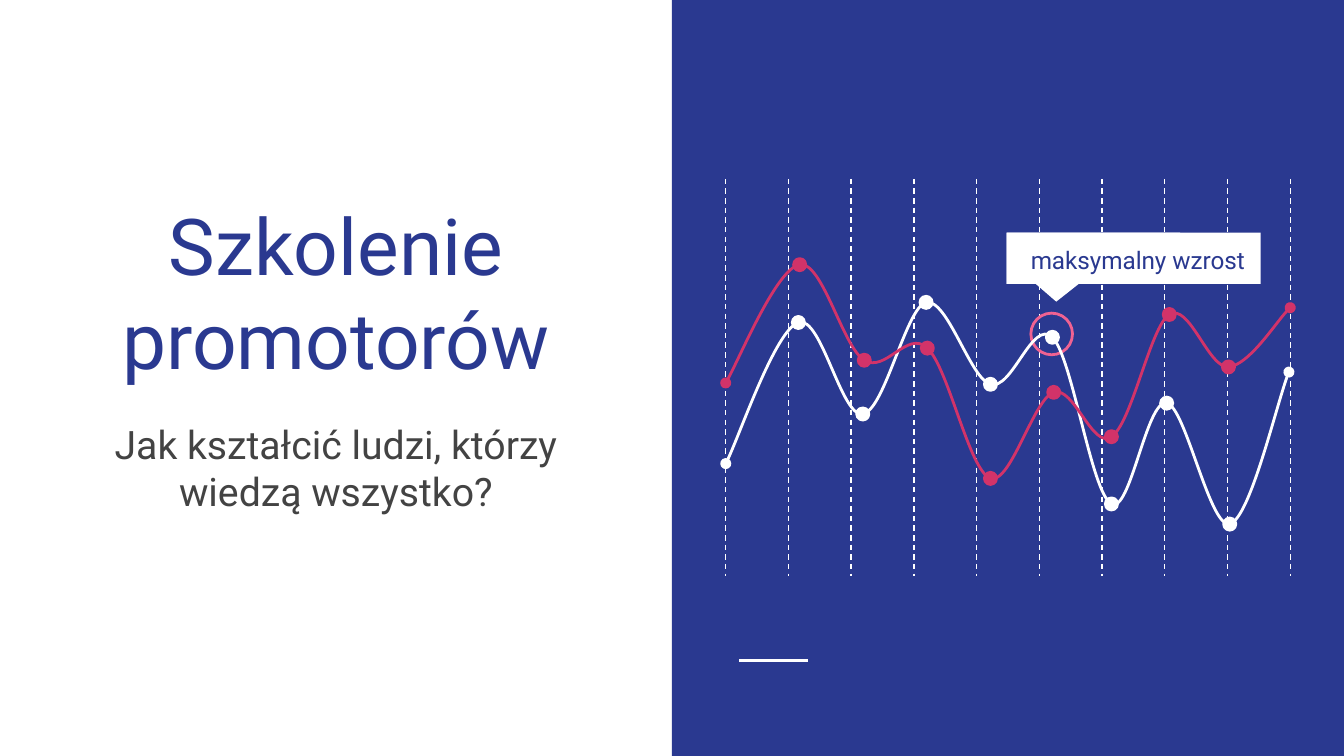
from pptx import Presentation
from pptx.dml.color import RGBColor
from pptx.enum.dml import MSO_LINE
from pptx.enum.shapes import MSO_CONNECTOR, MSO_SHAPE
from pptx.enum.text import MSO_ANCHOR, MSO_AUTO_SIZE, PP_ALIGN
from pptx.oxml.ns import qn
from pptx.util import Pt
from lxml.etree import SubElement

NAVY = RGBColor(0x2A, 0x39, 0x90)
WHITE = RGBColor(0xFF, 0xFF, 0xFF)
GREY = RGBColor(0x43, 0x43, 0x43)
RED = RGBColor(0xD2, 0x33, 0x69)
PINK = RGBColor(0xF0, 0x62, 0x92)
FONT = "Roboto"

# Curves inside the graph box: a start, then two handles and a knot per row
WHITE_CURVE = [
    (0, 152.6),
    (6.5, 140.4), (26.6, 81.3), (38.9, 77),
    (51.1, 72.7), (61.9, 128.1), (73.4, 126),
    (85, 124.5), (96.5, 69.1), (107.3, 66.2),
    (118.8, 64), (131, 107.2), (141.8, 110.1),
    (153.4, 113.7), (164.2, 74.8), (175, 84.9),
    (185.8, 95.7), (195.8, 168.4), (206.6, 174.2),
    (216.7, 180), (225.4, 118), (236.2, 120.2),
    (246.2, 121.6), (259.2, 187.2), (270, 185),
    (280.8, 182.1), (295.9, 117.3), (301.7, 103.6),
]
RED_CURVE = [
    (0, 109.4),
    (6.5, 98.6), (27.4, 48.2), (39.6, 46),
    (51.8, 43.9), (62.6, 90), (74.2, 97.2),
    (85.7, 104.4), (97.2, 80.6), (108, 90.7),
    (119.5, 101.5), (130.3, 156.2), (141.8, 160.5),
    (152.6, 164.1), (164.9, 118), (175.7, 114.4),
    (186.5, 110.8), (196.6, 145.4), (206.6, 138.2),
    (217.4, 131.7), (227.5, 79.2), (237.6, 72.7),
    (248.4, 66.2), (258.5, 101.5), (269.3, 100.8),
    (280.1, 100), (296.6, 74.1), (302.4, 69.1),
]


def add_box(slide, kind, box, fill=None, line=None):
    shape = slide.shapes.add_shape(kind, *map(Pt, box))
    shape.shadow.inherit = False
    if fill is None:
        shape.fill.background()
    else:
        shape.fill.solid()
        shape.fill.fore_color.rgb = fill
    if line is None:
        shape.line.fill.background()
    else:
        shape.line.color.rgb = line
        shape.line.width = Pt(1.5)
    return shape


def add_line(slide, start, end, width):
    line = slide.shapes.add_connector(MSO_CONNECTOR.STRAIGHT, *map(Pt, start + end))
    line.line.color.rgb = WHITE
    line.line.width = Pt(width)
    SubElement(line.element.spPr, qn("a:effectLst"))
    return line


def add_circle(slide, center, size, fill, line):
    x, y = center
    add_box(slide, MSO_SHAPE.OVAL, (x - size / 2, y - size / 2, size, size), fill, line)


def write(shape, box, text, size, color, anchor, spacing=1.0):
    shape.left, shape.top, shape.width, shape.height = map(Pt, box)
    frame = shape.text_frame
    frame.text = text
    frame.word_wrap = True
    frame.auto_size = MSO_AUTO_SIZE.NONE
    frame.vertical_anchor = anchor
    frame.margin_left = frame.margin_right = Pt(7.2)
    frame.margin_top = frame.margin_bottom = Pt(7.2)
    para = frame.paragraphs[0]
    para.alignment = PP_ALIGN.CENTER
    para.line_spacing = spacing
    para.space_before = Pt(0)
    span = para.runs[0]
    span.font.name = FONT
    span.font.size = Pt(size)
    span.font.color.rgb = color


def add_curve(slide, box, points, color):
    placed = [(box[0] + x, box[1] + y) for x, y in points]
    builder = slide.shapes.build_freeform(Pt(placed[0][0]), Pt(placed[0][1]))
    builder.add_line_segments([(Pt(x), Pt(y)) for x, y in placed[1:]], close=False)
    curve = builder.convert_to_shape()
    curve.shadow.inherit = False
    curve.fill.background()
    curve.line.color.rgb = color
    curve.line.width = Pt(1.5)

    # Join every three straight segments into one Bézier segment
    segments = list(curve.element.iter(qn("a:lnTo")))
    for first in range(0, len(segments), 3):
        bezier = SubElement(segments[first].getparent(), qn("a:cubicBezTo"))
        for segment in segments[first:first + 3]:
            bezier.append(segment[0])
            segment.getparent().remove(segment)

    # Round ends, and a dot on each inner knot
    outline = curve.element.spPr.find(qn("a:ln"))
    for end in ("a:headEnd", "a:tailEnd"):
        SubElement(outline, qn(end), type="oval", w="med", len="med")
    for knot in placed[3:-1:3]:
        add_circle(slide, knot, 6.5, color, color)


def add_callout(slide, box):
    left, top, width, height = box
    # The narrow bubble carries the pointer, the wide one the label
    for bubble_width, tip in ((92.9, (-0.214, 0.85)), (width, (-0.203, 0.499))):
        bubble = add_box(slide, MSO_SHAPE.ROUNDED_RECTANGULAR_CALLOUT,
                         (left, top, bubble_width, height), WHITE)
        for index, value in enumerate((*tip, 0)):
            bubble.adjustments[index] = value


def add_graph(slide, box):
    left, top, width, height = box
    add_callout(slide, (left + 150.5, top + 28.8, 136.1, 27.4))
    # Ten evenly spaced grid lines
    for index in range(10):
        x = left + index * width / 9
        grid_line = add_line(slide, (x, top), (x, top + height), 0.75)
        grid_line.line.dash_style = MSO_LINE.DASH
    add_circle(slide, (left + 174.6, top + 83.1), 22.3, None, PINK)
    add_curve(slide, box, WHITE_CURVE, WHITE)
    add_curve(slide, box, RED_CURVE, RED)
    # Callout label
    label_box = (left + 150.5, top + 30.9, 140.4, 22.3)
    label = slide.shapes.add_textbox(*map(Pt, label_box))
    write(label, label_box, "maksymalny wzrost", 13, NAVY, MSO_ANCHOR.MIDDLE, 1.15)


def add_panel(slide, box):
    left, top, width, height = box
    add_box(slide, MSO_SHAPE.RECTANGLE, box, NAVY)
    add_line(slide, (left + 36, top + 354), (left + 72.7, top + 354), 1.5)
    add_graph(slide, (left + 28.8, top + 95.8, 302.4, 213))


def add_heading(slide, box):
    left, top, width, height = box
    write(slide.shapes.title, (left + 20.9, top + 90.7, width - 41.8, 123.1),
          "Szkolenie promotorów", 42, NAVY, MSO_ANCHOR.BOTTOM)
    write(slide.placeholders[1], (left + 20.9, top + 218.2, width - 41.8, 100.1),
          "Jak kształcić ludzi, którzy wiedzą wszystko?", 21, GREY, MSO_ANCHOR.TOP)


def main():
    deck = Presentation()
    deck.slide_width, deck.slide_height = Pt(720), Pt(405)
    slide = deck.slides.add_slide(deck.slide_layouts[0])
    add_heading(slide, (0, 0, 360, 405))
    add_panel(slide, (360, 0, 360, 405))
    deck.save("out.pptx")


if __name__ == "__main__":
    main()
